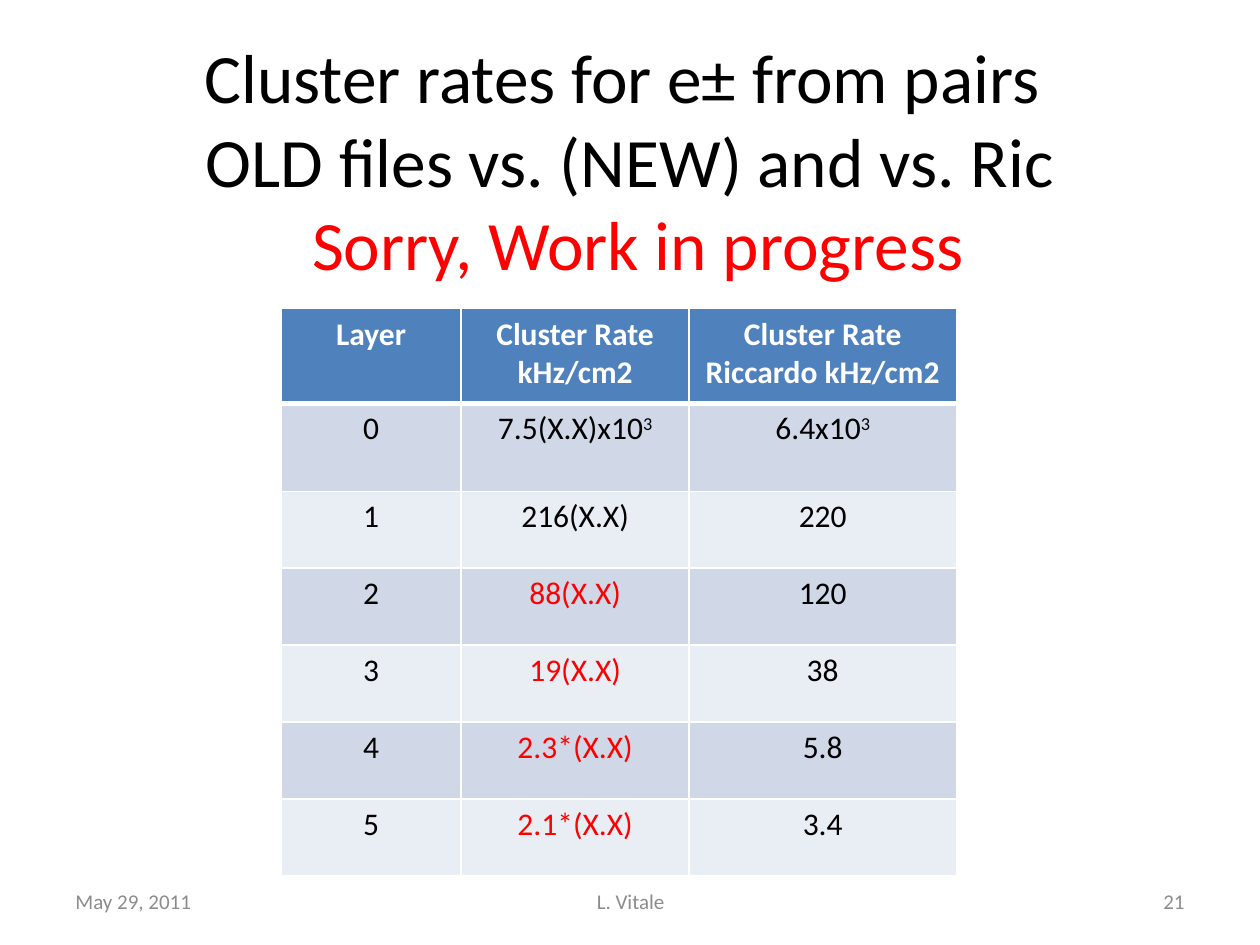
"""Build the slide on cluster rates for pairs."""
from lxml.etree import SubElement
from pptx import Presentation
from pptx.dml.color import RGBColor
from pptx.enum.text import MSO_ANCHOR, PP_ALIGN
from pptx.oxml.ns import qn
from pptx.util import Inches, Pt

BLACK, RED, WHITE, GREY = "000000", "FF0000", "FFFFFF", "8C8C8C"
HEAD, DARK, LIGHT = "4F81BD", "D0D8E8", "E9EDF4"
LEFT, MID, RIGHT = PP_ALIGN.LEFT, PP_ALIGN.CENTER, PP_ALIGN.RIGHT

TITLE = [
    ("Cluster rates for e± from pairs \vOLD files vs. (NEW) and vs. Ric\v ", BLACK),
    ("Sorry, Work in progress", RED),
]
FOOT = [
    ("May 29, 2011", 0.5, 2.33, LEFT),
    ("L. Vitale", 3.42, 3.17, MID),
    ("21", 7.17, 2.33, RIGHT),
]
ROWS = [
    ("Layer", "Cluster Rate\nkHz/cm2", "Cluster Rate\nRiccardo kHz/cm2"),
    ("0", "7.5(X.X)x10^3", "6.4x10^3"),
    ("1", "216(X.X)", "220"),
    ("2", "88(X.X)", "120"),
    ("3", "19(X.X)", "38"),
    ("4", "2.3*(X.X)", "5.8"),
    ("5", "2.1*(X.X)", "3.4"),
]
WIDTHS = [1.43, 1.81, 2.12]
HEIGHTS = [0.75, 0.7] + [0.61] * 5
RED_FROM = 3


def paint(hue):
    return RGBColor.from_string(hue)


def add_run(para, text, size, hue, bold, raised):
    run = para.add_run()
    run.text = text
    font = run.font
    font.name, font.size, font.bold = "Calibri", Pt(size), bold
    font.color.rgb = paint(hue)
    if raised:
        run._r.get_or_add_rPr().set("baseline", "30000")


def put(frame, text, size=18, hue=BLACK, bold=False, align=MID):
    parts = [(text, hue)] if isinstance(text, str) else text
    para = frame.paragraphs[0]
    para.alignment = align
    for words, tint in parts:
        for row, line in enumerate(words.split("\n")):
            if row:
                para = frame.add_paragraph()
                para.alignment = align
            for turn, piece in enumerate(line.split("\v")):
                if turn:
                    para.add_line_break()
                for step, bit in enumerate(piece.split("^")):
                    add_run(para, bit, size, tint, bold, step == 1)


def add_box(slide, text, left, top, width, height, **style):
    box = slide.shapes.add_textbox(*map(Inches, (left, top, width, height)))
    frame = box.text_frame
    frame.word_wrap = True
    frame.vertical_anchor = MSO_ANCHOR.MIDDLE
    put(frame, text, **style)


def edge(cell, row):
    props = cell._tc.get_or_add_tcPr()
    thick = {"T": row == 1, "B": row == 0}
    for spot, side in enumerate("LRTB"):
        line = SubElement(props, qn(f"a:ln{side}"))
        line.set("w", str(Pt(3 if thick.get(side) else 1)))
        fill = SubElement(line, qn("a:solidFill"))
        SubElement(fill, qn("a:srgbClr")).set("val", WHITE)
        props.insert(spot, line)


def add_grid(slide):
    spot = map(Inches, (2.23, 2.45, sum(WIDTHS), sum(HEIGHTS)))
    table = slide.shapes.add_table(len(ROWS), len(WIDTHS), *spot).table
    for col, width in zip(table.columns, WIDTHS):
        col.width = Inches(width)
    for row, texts in enumerate(ROWS):
        table.rows[row].height = Inches(HEIGHTS[row])
        band = HEAD if row == 0 else DARK if row % 2 else LIGHT
        for col, text in enumerate(texts):
            cell = table.cell(row, col)
            cell.fill.solid()
            cell.fill.fore_color.rgb = paint(band)
            edge(cell, row)
            late = col == 1 and row >= RED_FROM
            hue = WHITE if row == 0 else RED if late else BLACK
            put(cell.text_frame, text, hue=hue, bold=row == 0)


def main():
    deck = Presentation()
    deck.slide_width, deck.slide_height = Inches(10), Inches(7.5)
    slide = deck.slides.add_slide(deck.slide_layouts[6])
    add_box(slide, TITLE, 0.5, 0.33, 9, 1.87, size=39.6)
    for text, left, width, align in FOOT:
        add_box(slide, text, left, 6.95, width, 0.4, size=12, hue=GREY, align=align)
    add_grid(slide)
    deck.save("out.pptx")


if __name__ == "__main__":
    main()
